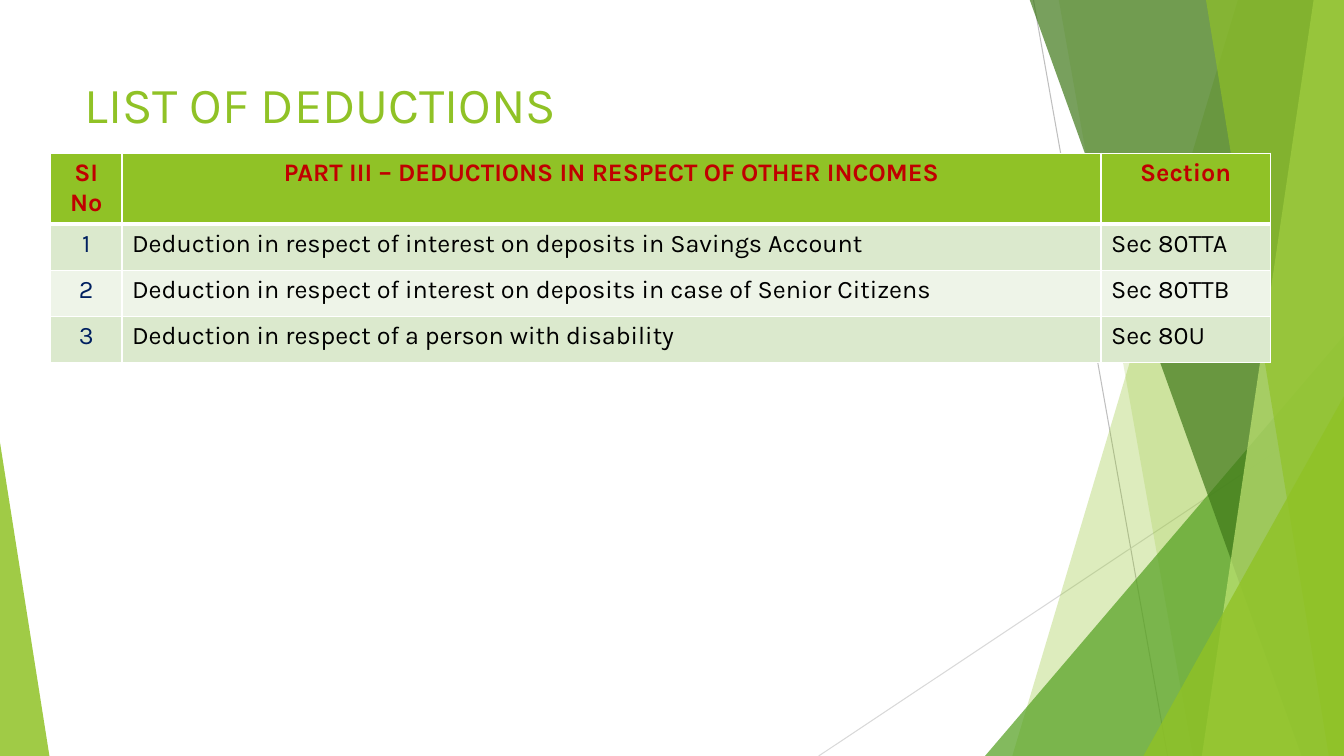
from lxml import etree
from pptx import Presentation
from pptx.dml.color import RGBColor
from pptx.enum.shapes import MSO_CONNECTOR, MSO_SHAPE
from pptx.enum.text import MSO_ANCHOR, PP_ALIGN
from pptx.oxml.ns import qn
from pptx.util import Inches, Pt

STRAIGHT = MSO_CONNECTOR.STRAIGHT
TRIANGLE = MSO_SHAPE.ISOSCELES_TRIANGLE
BOTTOM = MSO_ANCHOR.BOTTOM
LEFT, CENTER = PP_ALIGN.LEFT, PP_ALIGN.CENTER

COLORS = {
    "lime": "90C226", "pale lime": "C0E474", "green": "54A021", "forest": "3F7819",
    "gray": "BFBFBF", "light gray": "D9D9D9", "white": "FFFFFF", "black": "000000",
    "red": "C00000", "navy": "002060", "band": "DBE9CD", "light band": "EEF4E8",
}
FACET_TOP, SLIDE_RIGHT, SLIDE_BOTTOM = -0.01, 13.33, 7.5

# Facets run to the right slide edge: left end at top, left end at bottom, color, opacity
FACETS_BEHIND = [(12.28, 10.04, "lime", 30), (10.5, 11.83, "lime", 20)]
FACETS_FRONT = [
    (10.21, 12.91, "forest", 70),
    (13.03, 11.92, "pale lime", 70),
    (11.96, 13.18, "lime", 65),
]

COLUMN_WIDTHS = [0.71, 9.71, 1.68]
ROW_HEIGHTS = [0.7, 0.46, 0.46, 0.46]
HEADINGS = ["SI No", "PART III – DEDUCTIONS IN RESPECT OF OTHER INCOMES", "Section"]
DEDUCTIONS = [
    ["1", "Deduction in respect of interest on deposits in Savings Account", "Sec 80TTA"],
    ["2", "Deduction in respect of interest on deposits in case of Senior Citizens", "Sec 80TTB"],
    ["3", "Deduction in respect of a person with disability", "Sec 80U"],
]


def rgb(name):
    return RGBColor.from_string(COLORS[name])


def write_text(text_frame, text, size=18, color="black", bold=False, align=LEFT):
    paragraph = text_frame.paragraphs[0]
    paragraph.alignment = align
    run = paragraph.add_run()
    run.text = text
    font = run.font
    font.name, font.size, font.bold = "Karla", Pt(size), bold
    font.color.rgb = rgb(color)


def add_border(cell, side, width):
    """Draw one white cell edge; call before filling the cell to keep the XML order."""
    line = etree.SubElement(cell._tc.get_or_add_tcPr(), qn(f"a:ln{side}"), w=str(Pt(width)))
    fill = etree.SubElement(line, qn("a:solidFill"))
    etree.SubElement(fill, qn("a:srgbClr"), val=COLORS["white"])


class SlideBuilder:
    def __init__(self, slide):
        self.slide = slide
        self.shapes = slide.shapes

    def style_shape(self, shape, color, opacity):
        shape.shadow.inherit = False
        shape.line.fill.background()
        shape.fill.solid()
        shape.fill.fore_color.rgb = rgb(color)
        color_element = shape._element.spPr.find(qn("a:solidFill"))[0]
        etree.SubElement(color_element, qn("a:alpha"), val=str(opacity * 1000))

    def add_line(self, start, end, color):
        points = [Inches(value) for value in (*start, *end)]
        connector = self.shapes.add_connector(STRAIGHT, *points)
        connector.line.color.rgb = rgb(color)
        connector.line.width = Pt(0.75)
        etree.SubElement(connector._element.spPr, qn("a:effectLst"))

    def add_facet(self, top_left, bottom_left, color, opacity):
        builder = self.shapes.build_freeform(Inches(top_left), Inches(FACET_TOP))
        corners = [(SLIDE_RIGHT, FACET_TOP), (SLIDE_RIGHT, SLIDE_BOTTOM),
                   (bottom_left, SLIDE_BOTTOM)]
        builder.add_line_segments([(Inches(x), Inches(y)) for x, y in corners])
        self.style_shape(builder.convert_to_shape(), color, opacity)

    def add_triangle(self, left, width, height, apex, color, opacity):
        """Stand a triangle on the slide's bottom edge; apex runs from 0 (left) to 1 (right)."""
        shape = self.shapes.add_shape(TRIANGLE, Inches(left), Inches(SLIDE_BOTTOM - height),
                                      Inches(width), Inches(height))
        shape.adjustments[0] = apex
        self.style_shape(shape, color, opacity)

    def add_title(self, text):
        title = self.shapes.title
        title.left, title.top = Inches(0.74), Inches(0.67)
        title.width, title.height = Inches(9.4), Inches(0.71)
        title.text_frame.vertical_anchor = BOTTOM
        write_text(title.text_frame, text, size=36, color="lime")

    def add_table(self, left, top):
        rows = [HEADINGS, *DEDUCTIONS]
        frame = self.shapes.add_table(len(rows), len(COLUMN_WIDTHS), Inches(left), Inches(top),
                                      Inches(sum(COLUMN_WIDTHS)), Inches(sum(ROW_HEIGHTS)))
        table = frame.table
        for column, width in zip(table.columns, COLUMN_WIDTHS):
            column.width = Inches(width)
        for row, height in zip(table.rows, ROW_HEIGHTS):
            row.height = Inches(height)
        for row_index, texts in enumerate(rows):
            for column_index, text in enumerate(texts):
                self.fill_cell(table.cell(row_index, column_index), text, row_index, column_index)

    def fill_cell(self, cell, text, row_index, column_index):
        is_heading = row_index == 0
        is_number = column_index == 0
        widths = {"L": 1, "R": 1, "T": 3 if row_index == 1 else 1, "B": 3 if is_heading else 1}
        for side, width in widths.items():
            add_border(cell, side, width)
        band = "band" if row_index % 2 else "light band"
        cell.fill.solid()
        cell.fill.fore_color.rgb = rgb("lime" if is_heading else band)
        body_color = "navy" if is_number else "black"
        write_text(cell.text_frame, text, color="red" if is_heading else body_color,
                   bold=is_heading, align=CENTER if is_heading or is_number else LEFT)


def main():
    presentation = Presentation()
    presentation.slide_width = Inches(SLIDE_RIGHT)
    presentation.slide_height = Inches(SLIDE_BOTTOM)
    title_only = presentation.slide_layouts[5]
    builder = SlideBuilder(presentation.slides.add_slide(title_only))

    builder.add_line((10.25, 0), (11.58, SLIDE_BOTTOM), "gray")
    builder.add_line((SLIDE_RIGHT, 4.03), (8.12, SLIDE_BOTTOM), "light gray")
    for facet in FACETS_BEHIND:
        builder.add_facet(*facet)
    builder.add_triangle(9.77, 3.56, 4.17, 1, "green", 72)
    for facet in FACETS_FRONT:
        builder.add_facet(*facet)
    builder.add_triangle(11.34, 1.99, 3.57, 1, "lime", 80)
    builder.add_triangle(0, 0.49, 3.11, 0, "lime", 85)

    builder.add_title("LIST OF DEDUCTIONS")
    builder.add_table(0.5, 1.52)
    presentation.save("out.pptx")


if __name__ == "__main__":
    main()
